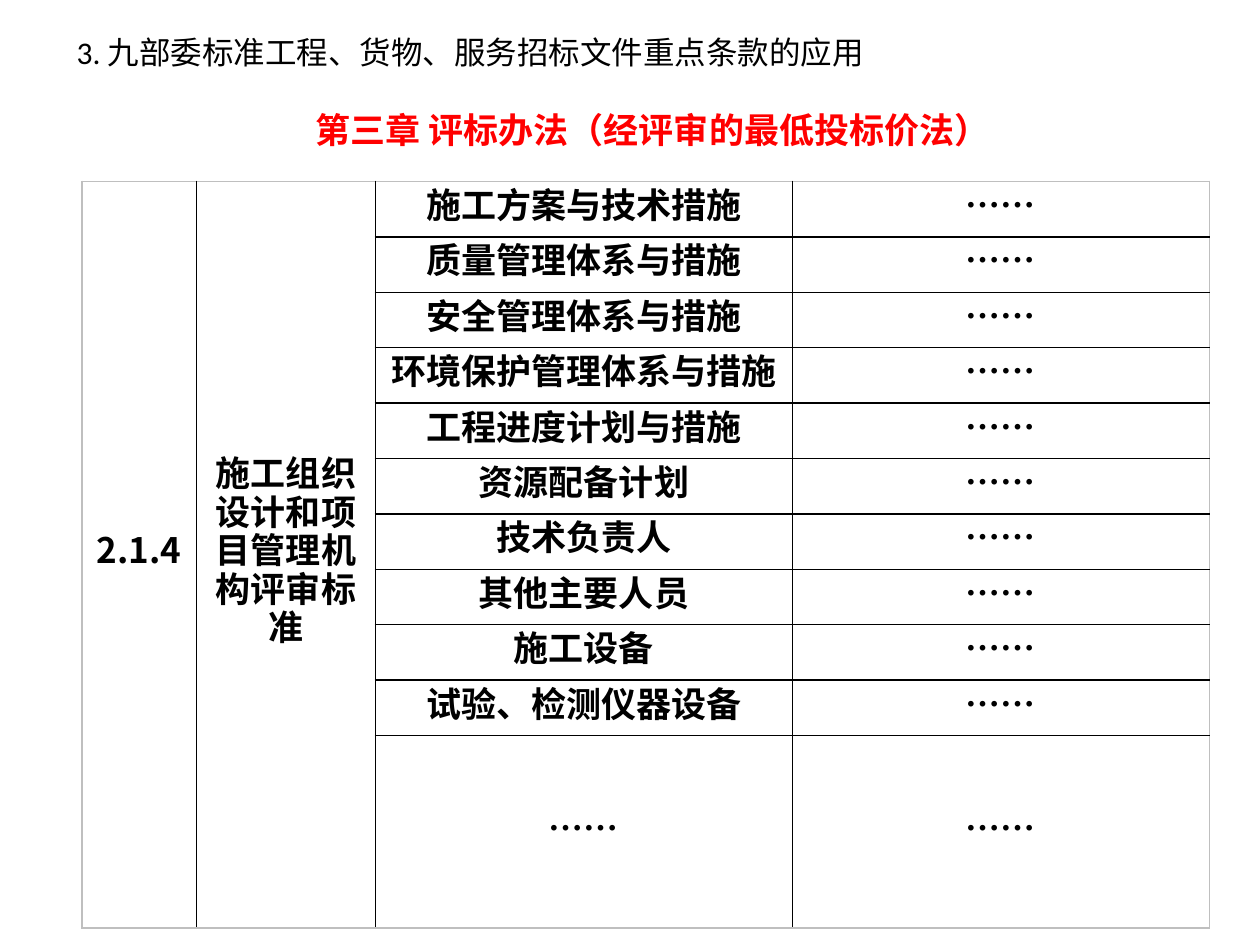
from dataclasses import dataclass

from lxml import etree
from pptx import Presentation
from pptx import util as u
from pptx.dml.color import RGBColor
from pptx.enum import text
from pptx.oxml import ns

BLACK = RGBColor(0, 0, 0)
RED = RGBColor(255, 0, 0)
GREY = RGBColor(0xBF, 0xBF, 0xBF)
HEAVY_FONT = "Noto Sans CJK SC"
LIGHT_FONT = "Calibri"
DOTS = "……"
CRITERIA = [
    "施工方案与技术措施", "质量管理体系与措施", "安全管理体系与措施",
    "环境保护管理体系与措施", "工程进度计划与措施", "资源配备计划", "技术负责人",
    "其他主要人员", "施工设备", "试验、检测仪器设备", DOTS,
]
COLUMNS = [0.91, 1.42, 3.31, 3.31]
ROW_HEIGHT = 0.44
MERGED_COLUMNS = 2
WIDE_TEXT_LENGTH = 11


@dataclass
class TextStyle:
    font: str
    size: int
    color: RGBColor
    bold: bool = False


SECTION = TextStyle(LIGHT_FONT, 18, BLACK)
CHAPTER = TextStyle(HEAVY_FONT, 20, RED, True)
ENTRY = TextStyle(HEAVY_FONT, 20, BLACK, True)


def write(frame, words: str, style: TextStyle, align=text.PP_ALIGN.CENTER):
    frame.text = words
    para = frame.paragraphs[0]
    para.alignment = align
    para.font.name = style.font
    para.font.size = u.Pt(style.size)
    para.font.bold = style.bold
    para.font.color.rgb = style.color
    if style.font == HEAVY_FONT:
        latin = para.font._element.find(ns.qn("a:latin"))
        east_asian = etree.Element(ns.qn("a:ea"), typeface=style.font)
        latin.addnext(east_asian)
    return para


def draw_borders(cell, colors: dict[str, RGBColor]) -> None:
    properties = cell._tc.get_or_add_tcPr()
    for index, (side, color) in enumerate(colors.items()):
        line = etree.Element(ns.qn(f"a:ln{side}"), w=str(u.Pt(1)))
        fill = etree.SubElement(line, ns.qn("a:solidFill"))
        etree.SubElement(fill, ns.qn("a:srgbClr"), val=str(color))
        properties.insert(index, line)


def fill_cell(cell, words: str) -> None:
    write(cell.text_frame, words, ENTRY).line_spacing = u.Pt(22)


def format_cell(cell, row: int, column: int) -> None:
    cell.fill.background()
    cell.vertical_anchor = text.MSO_ANCHOR.MIDDLE
    side = 0 if len(cell.text) >= WIDE_TEXT_LENGTH and column == MERGED_COLUMNS else 0.08
    cell.margin_left = cell.margin_right = u.Inches(side)
    cell.margin_top = cell.margin_bottom = 0
    last_row = len(CRITERIA) - 1
    last_column = len(COLUMNS) - 1
    spans_down = column < MERGED_COLUMNS
    outer = {
        "L": column == 0,
        "R": column == last_column,
        "T": row == 0,
        "B": row == last_row or spans_down,
    }
    draw_borders(cell, {edge: GREY if out else BLACK for edge, out in outer.items()})


def add_criteria_table(page) -> None:
    frame = page.shapes.add_table(
        len(CRITERIA), len(COLUMNS), u.Inches(0.65), u.Inches(1.44),
        u.Inches(sum(COLUMNS)), u.Inches(ROW_HEIGHT * len(CRITERIA)))
    table = frame.table
    table.first_row = table.horz_banding = False
    for column, width in zip(table.columns, COLUMNS):
        column.width = u.Inches(width)
    for row in table.rows:
        row.height = u.Inches(ROW_HEIGHT)
    for column, words in enumerate(["2.1.4", "施工组织设计和项目管理机构评审标准"]):
        table.cell(0, column).merge(table.cell(len(CRITERIA) - 1, column))
        fill_cell(table.cell(0, column), words)
    for row, criterion in enumerate(CRITERIA):
        fill_cell(table.cell(row, 2), criterion)
        fill_cell(table.cell(row, 3), DOTS)
        for column in range(len(COLUMNS)):
            format_cell(table.cell(row, column), row, column)


def add_headings(page) -> None:
    title = page.shapes.title
    title.left, title.top = u.Inches(0.68), u.Inches(0.8)
    title.width, title.height = u.Inches(9), u.Inches(0.45)
    title.text_frame.vertical_anchor = text.MSO_ANCHOR.MIDDLE
    title.text_frame.auto_size = text.MSO_AUTO_SIZE.NONE
    write(title.text_frame, "第三章 评标办法（经评审的最低投标价法）", CHAPTER)

    box = page.shapes.add_textbox(
        u.Inches(0.51), u.Inches(0.21), u.Inches(6.69), u.Inches(0.4))
    box.text_frame.word_wrap = True
    box.text_frame.auto_size = text.MSO_AUTO_SIZE.SHAPE_TO_FIT_TEXT
    write(box.text_frame, "3. 九部委标准工程、货物、服务招标文件重点条款的应用",
          SECTION, text.PP_ALIGN.LEFT)


def main() -> None:
    deck = Presentation()
    deck.slide_width, deck.slide_height = u.Inches(10), u.Inches(7.5)
    page = deck.slides.add_slide(deck.slide_layouts.get_by_name("Title Only"))
    add_headings(page)
    add_criteria_table(page)
    deck.save("out.pptx")


if __name__ == "__main__":
    main()
